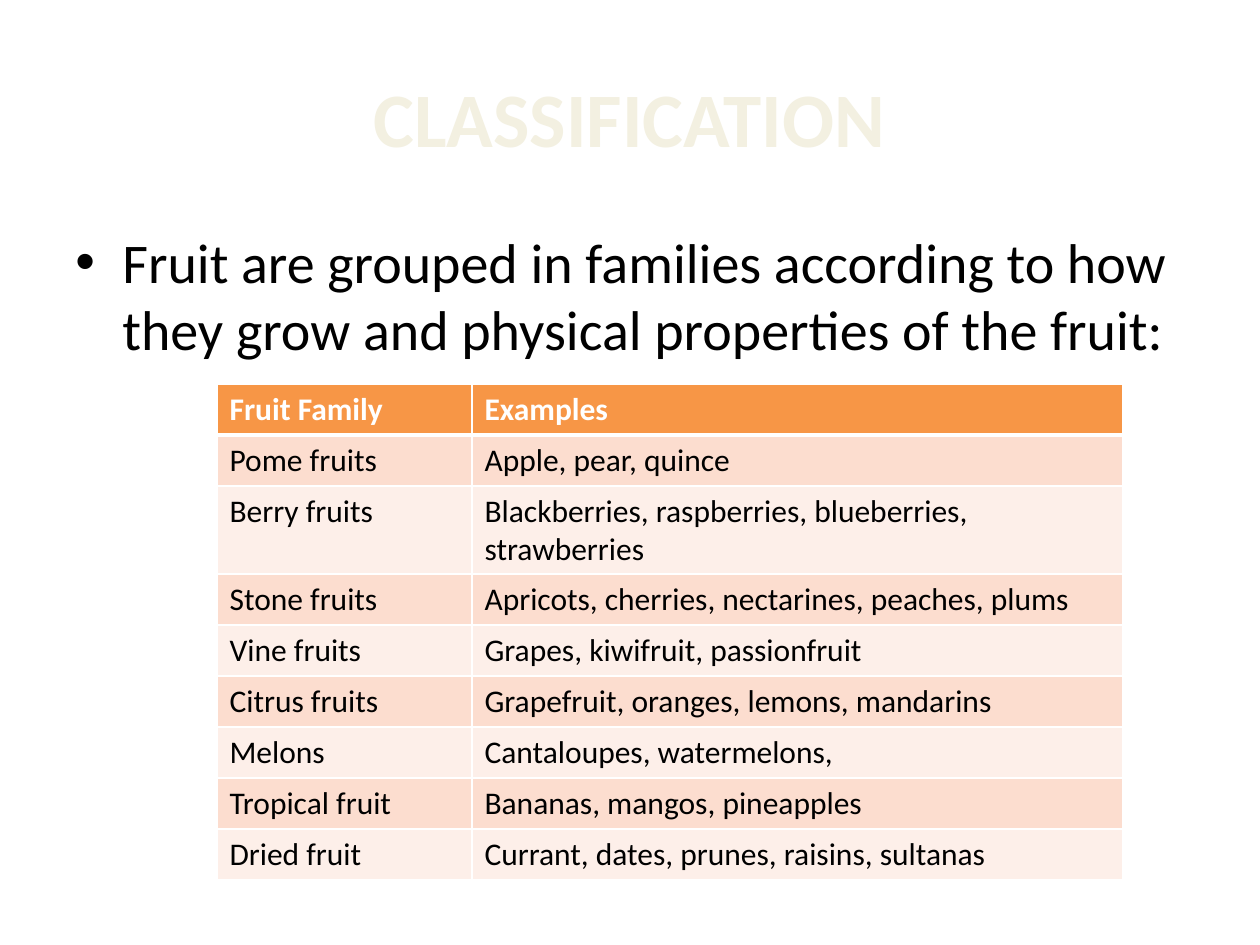
"""Build the fruit classification slide with its table of fruit families."""
from lxml import etree
from pptx import Presentation
from pptx.dml.color import RGBColor
from pptx.enum.text import MSO_ANCHOR, PP_ALIGN
from pptx.oxml.ns import qn
from pptx.util import Pt

CENTER, LEFT = PP_ALIGN.CENTER, PP_ALIGN.LEFT
MIDDLE = MSO_ANCHOR.MIDDLE
TITLE_ONLY = 5
COLORS = {
    "title": "F3F0E1",
    "text": "000000",
    "white": "FFFFFF",
    "header": "F79646",
    "odd": "FCDDCF",
    "even": "FDEFE9",
}
FAMILIES = [
    ("Fruit Family", "Examples"),
    ("Pome fruits", "Apple, pear, quince"),
    ("Berry fruits", "Blackberries, raspberries, blueberries, strawberries"),
    ("Stone fruits", "Apricots, cherries, nectarines, peaches, plums"),
    ("Vine fruits", "Grapes, kiwifruit, passionfruit"),
    ("Citrus fruits", "Grapefruit, oranges, lemons, mandarins"),
    ("Melons", "Cantaloupes, watermelons,"),
    ("Tropical fruit", "Bananas, mangos, pineapples"),
    ("Dried fruit", "Currant, dates, prunes, raisins, sultanas"),
]
COLUMN_WIDTHS = (255, 651)
ROW_HEIGHT = 51


def px(length):
    return round(length * 914400 / 126)


def write(frame, text, color, size, bold=False, align=LEFT):
    frame.text = text
    paragraph = frame.paragraphs[0]
    paragraph.alignment = align
    font = paragraph.runs[0].font
    for key, value in {"name": "Calibri", "size": Pt(size), "bold": bold}.items():
        setattr(font, key, value)
    font.color.rgb = RGBColor.from_string(COLORS[color])
    return paragraph


prs = Presentation()
prs.slide_width, prs.slide_height = px(1260), px(945)
slide = prs.slides.add_slide(prs.slide_layouts[TITLE_ONLY])

title = slide.shapes.title
title_box = {"left": 63, "top": 38, "width": 1134, "height": 158}
for side, length in title_box.items():
    setattr(title, side, px(length))
title.text_frame.vertical_anchor = MIDDLE
write(title.text_frame, "CLASSIFICATION", "title", 44, True, CENTER)

intro = slide.shapes.add_textbox(px(63), px(221), px(1134), px(624))
intro.text_frame.word_wrap = True
statement = write(
    intro.text_frame,
    "Fruit are grouped in families according to how they grow "
    "and physical properties of the fruit:",
    "text",
    32,
)
bullet_format = statement._p.get_or_add_pPr()
for key, value in {"marL": px(47), "indent": px(-47)}.items():
    bullet_format.set(key, str(value))
etree.SubElement(bullet_format, qn("a:buFont"), typeface="Arial")
etree.SubElement(bullet_format, qn("a:buChar"), char="•")

families = slide.shapes.add_table(
    len(FAMILIES), len(COLUMN_WIDTHS), px(217), px(384),
    px(sum(COLUMN_WIDTHS)), px(ROW_HEIGHT * len(FAMILIES)),
).table
for column, width in zip(families.columns, COLUMN_WIDTHS):
    column.width = px(width)

for row, entries in enumerate(FAMILIES):
    families.rows[row].height = px(ROW_HEIGHT)
    is_header = row == 0
    fill_name = "header" if is_header else ("even", "odd")[row % 2]
    edge_widths = {
        "lnL": 1,
        "lnR": 1,
        "lnT": 3 if row == 1 else 1,
        "lnB": 3 if is_header else 1,
    }
    for col, entry in enumerate(entries):
        cell = families.cell(row, col)
        write(cell.text_frame, entry, "white" if is_header else "text", 18, is_header)
        cell_format = cell._tc.get_or_add_tcPr()
        for edge, width in edge_widths.items():
            line = etree.SubElement(cell_format, qn(f"a:{edge}"), w=str(Pt(width)))
            paint = etree.SubElement(line, qn("a:solidFill"))
            etree.SubElement(paint, qn("a:srgbClr"), val=COLORS["white"])
        cell.fill.solid()
        cell.fill.fore_color.rgb = RGBColor.from_string(COLORS[fill_name])

prs.save("out.pptx")
